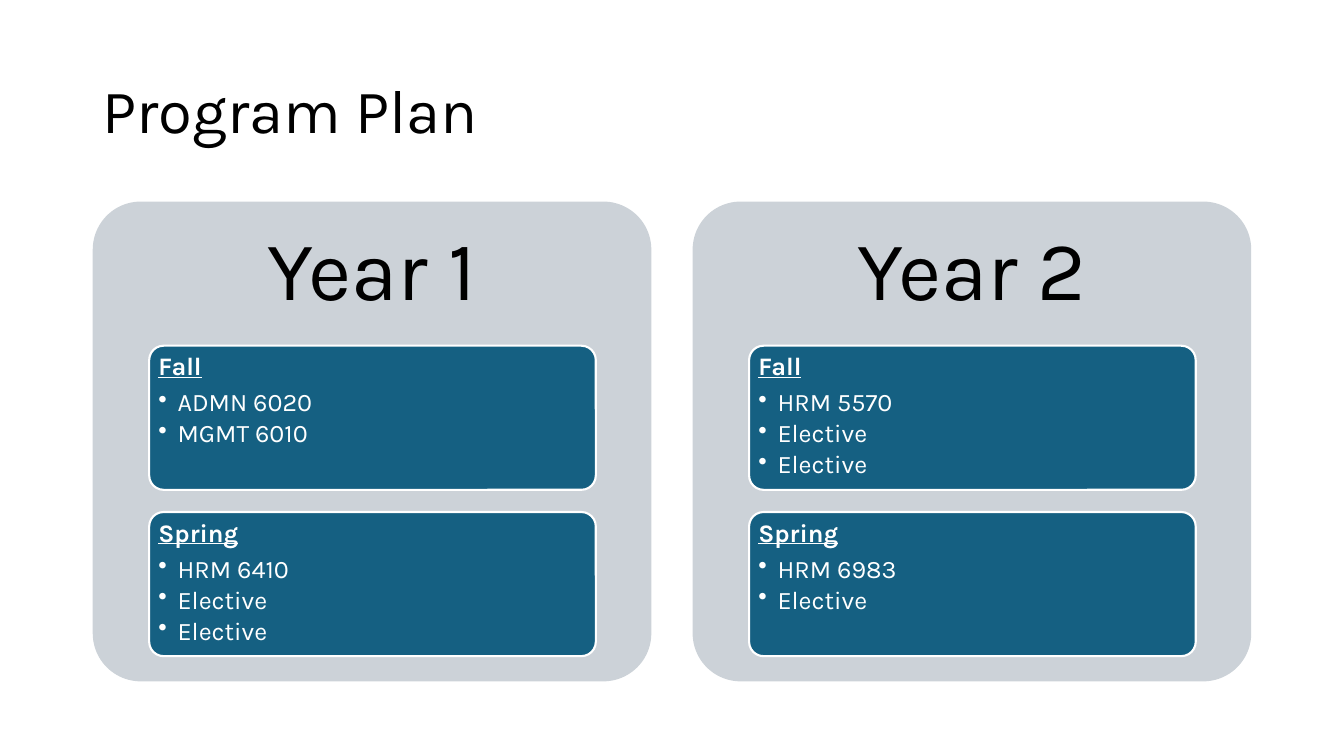
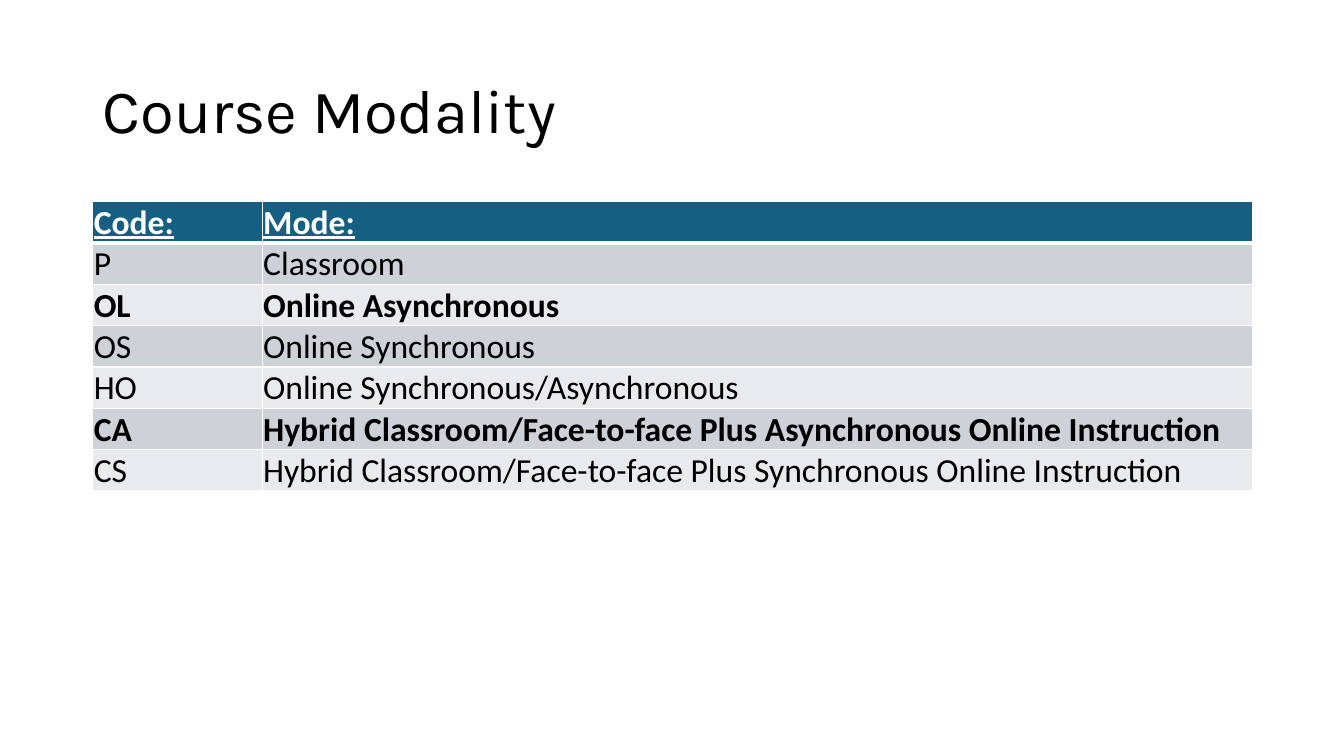
"""Build a two-slide deck with a program plan and a table of course modalities."""
import pptx
import pptx.dml.color
import pptx.enum.shapes
import pptx.enum.text
import pptx.oxml.ns
import pptx.util
from lxml import etree

Inches = pptx.util.Inches
Pt = pptx.util.Pt
RGBColor = pptx.dml.color.RGBColor
ANCHOR = pptx.enum.text.MSO_ANCHOR
ALIGN = pptx.enum.text.PP_ALIGN
qn = pptx.oxml.ns.qn

BLACK = RGBColor(0x00, 0x00, 0x00)
WHITE = RGBColor(0xFF, 0xFF, 0xFF)
BLUE = RGBColor(0x15, 0x60, 0x82)
GREY = RGBColor(0xCC, 0xD2, 0xD8)
PALE = RGBColor(0xE8, 0xEA, 0xED)

HEADING_FONT = "Karla"
TABLE_FONT = "Calibri"
LEFT = 0.92
TOP = 2
CARD_WIDTH = 5.54
CARD_HEIGHT = 4.76
CARD_STEP = 5.95
HEADER_HEIGHT = 1.43
TERM_INDENT = 0.56
TERM_WIDTH = 4.43
TERM_HEIGHT = 1.43
TERM_STEP = 1.65
ROW_HEIGHT = 0.41
COLUMN_WIDTHS = (1.68, 9.82)

PLAN = (
    ("Year 1", (
        ("Fall", ("ADMN 6020", "MGMT 6010")),
        ("Spring", ("HRM 6410", "Elective", "Elective")),
    )),
    ("Year 2", (
        ("Fall", ("HRM 5570", "Elective", "Elective")),
        ("Spring", ("HRM 6983", "Elective")),
    )),
)

MODES = (
    ("Code:", "Mode:"),
    ("P", "Classroom"),
    ("OL", "Online Asynchronous"),
    ("OS", "Online Synchronous"),
    ("HO", "Online Synchronous/Asynchronous"),
    ("CA", "Hybrid Classroom/Face-to-face Plus Asynchronous Online Instruction"),
    ("CS", "Hybrid Classroom/Face-to-face Plus Synchronous Online Instruction"),
)
BOLD_CODES = ("Code:", "OL", "CA")


def set_margins(target, left, top, right, bottom):
    target.margin_left = Inches(left)
    target.margin_top = Inches(top)
    target.margin_right = Inches(right)
    target.margin_bottom = Inches(bottom)


def write(para, text, size, color, font=HEADING_FONT, bold=False, underline=False):
    para.text = text
    for span in para.runs:
        span.font.name = font
        span.font.size = Pt(size)
        span.font.color.rgb = color
        span.font.bold = bold
        span.font.underline = underline


def space(para, after):
    para.line_spacing = 0.9
    para.space_after = Pt(after)


def add_bullet(para):
    properties = para._p.get_or_add_pPr()
    properties.set("marL", str(Inches(0.19)))
    properties.set("indent", str(Inches(-0.19)))
    etree.SubElement(properties, qn("a:buChar")).set("char", "•")


def add_heading(slide, text, size, left, top, width, height, margins, after=0, align=ALIGN.LEFT):
    box = slide.shapes.add_textbox(Inches(left), Inches(top), Inches(width), Inches(height))
    frame = box.text_frame
    frame.word_wrap = True
    frame.vertical_anchor = ANCHOR.MIDDLE
    set_margins(frame, *margins)
    para = frame.paragraphs[0]
    write(para, text, size, BLACK)
    para.alignment = align
    space(para, after)


def add_titled_slide(deck, title):
    page = deck.slides.add_slide(deck.slide_layouts[6])
    add_heading(page, title, 44, LEFT, 0.4, 11.5, 1.45, (0.1, 0.05, 0.1, 0.05))
    return page


def add_panel(slide, left, top, width, height, fill):
    panel = slide.shapes.add_shape(
        pptx.enum.shapes.MSO_SHAPE.ROUNDED_RECTANGLE,
        Inches(left), Inches(top), Inches(width), Inches(height))
    panel.adjustments[0] = 0.1
    panel.shadow.inherit = False
    panel.fill.solid()
    panel.fill.fore_color.rgb = fill
    panel.line.fill.background()
    return panel


def add_term(slide, left, top, term, courses):
    panel = add_panel(slide, left, top, TERM_WIDTH, TERM_HEIGHT, BLUE)
    panel.line.color.rgb = WHITE
    panel.line.width = Pt(1.5)
    frame = panel.text_frame
    frame.word_wrap = True
    frame.vertical_anchor = ANCHOR.TOP
    set_margins(frame, 0.05, 0.04, 0.05, 0.04)
    heading = frame.paragraphs[0]
    write(heading, term, 18, WHITE, bold=True, underline=True)
    heading.alignment = ALIGN.LEFT
    space(heading, 6.3)
    for course in courses:
        para = frame.add_paragraph()
        write(para, course, 18, WHITE)
        para.alignment = ALIGN.LEFT
        para.level = 1
        space(para, 2.7)
        add_bullet(para)


def add_year(slide, left, year, terms):
    add_panel(slide, left, TOP, CARD_WIDTH, CARD_HEIGHT, GREY)
    add_heading(slide, year, 60, left, TOP, CARD_WIDTH, HEADER_HEIGHT,
                (0.25,) * 4, after=21, align=ALIGN.CENTER)
    for index, (term, courses) in enumerate(terms):
        top = TOP + HEADER_HEIGHT + index * TERM_STEP
        add_term(slide, left + TERM_INDENT, top, term, courses)


def add_borders(cell, top, bottom):
    properties = cell._tc.get_or_add_tcPr()
    for side, width in (("L", 1), ("R", 1), ("T", top), ("B", bottom)):
        line = etree.SubElement(properties, qn("a:ln" + side), w=str(Pt(width)))
        fill = etree.SubElement(line, qn("a:solidFill"))
        etree.SubElement(fill, qn("a:srgbClr"), val=str(WHITE))


def add_mode_table(slide, rows):
    table = slide.shapes.add_table(
        len(rows), len(COLUMN_WIDTHS), Inches(LEFT), Inches(TOP),
        Inches(sum(COLUMN_WIDTHS)), Inches(ROW_HEIGHT * len(rows))).table
    table.horz_banding = False
    table.first_row = True
    for column, width in zip(table.columns, COLUMN_WIDTHS):
        column.width = Inches(width)
    for index, values in enumerate(rows):
        table.rows[index].height = Inches(ROW_HEIGHT)
        header = index == 0
        fill = BLUE if header else (PALE, GREY)[index % 2]
        for cell, value in zip(table.rows[index].cells, values):
            add_borders(cell, 3 if index == 1 else 1, 3 if header else 1)
            cell.fill.solid()
            cell.fill.fore_color.rgb = fill
            cell.vertical_anchor = ANCHOR.BOTTOM
            set_margins(cell, 0.01, 0.01, 0.01, 0)
            write(cell.text_frame.paragraphs[0], value, 24, WHITE if header else BLACK,
                  TABLE_FONT, bold=values[0] in BOLD_CODES, underline=header)


def main():
    deck = pptx.Presentation()
    deck.slide_width = Inches(13.33)
    deck.slide_height = Inches(7.5)
    plan_page = add_titled_slide(deck, "Program Plan")
    for index, (year, terms) in enumerate(PLAN):
        add_year(plan_page, LEFT + index * CARD_STEP, year, terms)
    add_mode_table(add_titled_slide(deck, "Course Modality"), MODES)
    deck.save("out.pptx")


if __name__ == "__main__":
    main()
